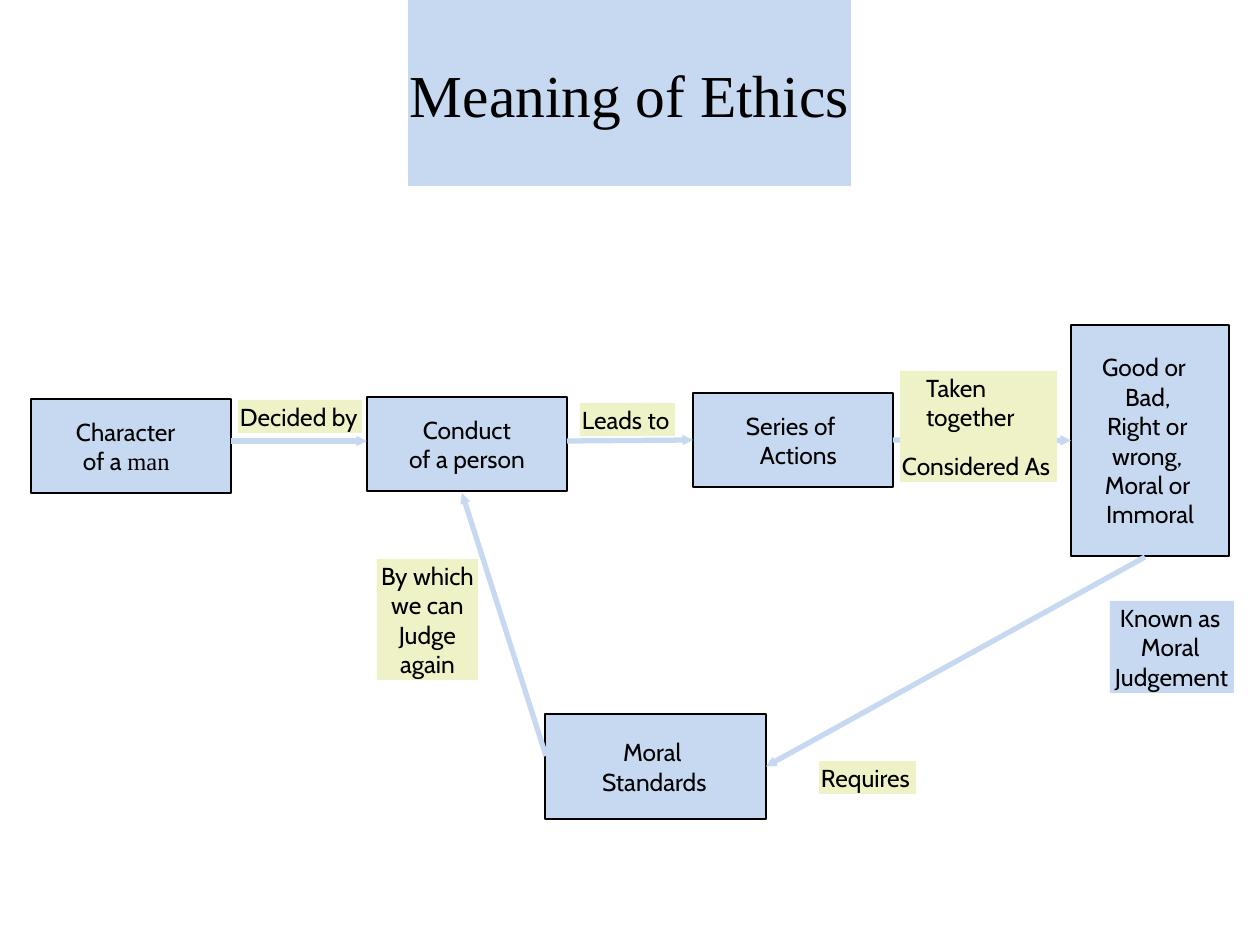
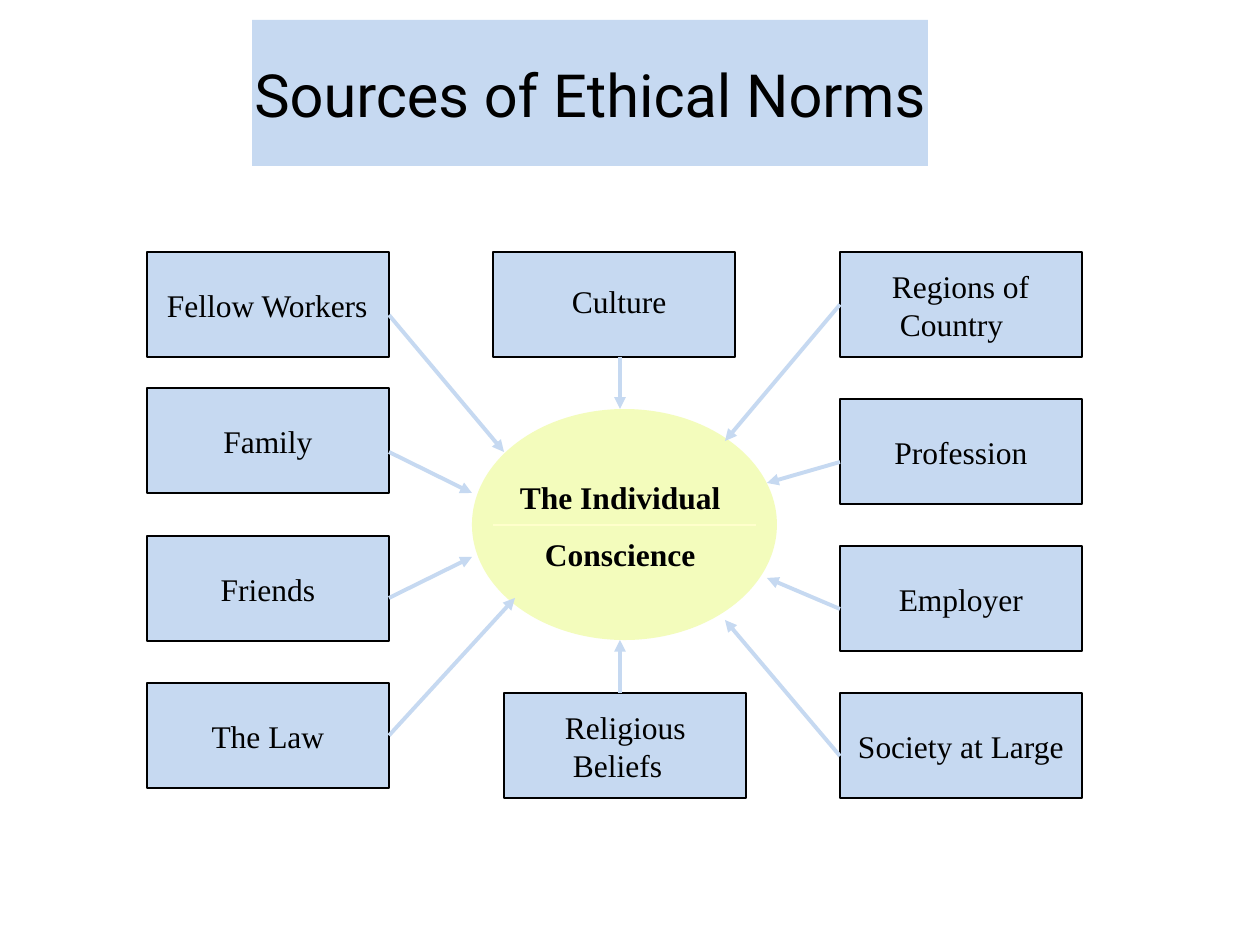
"""Build two slides on ethics: a flow of moral judgement and a map of ethical norms."""
from lxml import etree
from pptx import Presentation
from pptx.dml.color import RGBColor
from pptx.enum.shapes import MSO_CONNECTOR, MSO_SHAPE
from pptx.enum.text import MSO_ANCHOR, MSO_AUTO_SIZE, PP_ALIGN
from pptx.oxml.ns import qn
from pptx.util import Pt

RECT, OVAL = MSO_SHAPE.RECTANGLE, MSO_SHAPE.OVAL
STRAIGHT = MSO_CONNECTOR.STRAIGHT
MIDDLE, NO_FIT = MSO_ANCHOR.MIDDLE, MSO_AUTO_SIZE.NONE
LEFT, CENTER = PP_ALIGN.LEFT, PP_ALIGN.CENTER

SCALE = 914400 / 126
WIDE, HIGH = 1260, 945
BLUE, CREAM, LIME, PALE, BLACK = "C6D9F1", "EFF1C7", "F3FCBC", "FFFFCC", "000000"
SERIF, CABIN, ROBOTO = "Times New Roman", "Cabin", "Roboto"
SNAP = 2
THIN = 0.96

# A line of text is centred when plain, or set left when paired with an indent.
# Words after a bar are set in the serif face.
FLOW = {
    "title": ("Meaning of Ethics", (408, 0, 443, 186), SERIF),
    "boxes": [
        ((31, 399, 200, 94), [(45, "Character"), (52, "of a |man")]),
        ((367, 397, 200, 94), ["Conduct", "of a person"]),
        ((693, 393, 200, 94), [(53, "Series of"), (67, "Actions")]),
        ((1071, 325, 158, 231), [(31, "Good or"), (54, "Bad,"), (36, "Right or"),
                                 (41, "wrong,"), (34, "Moral or"), (35, "Immoral")]),
        ((545, 714, 221, 105), [(78, "Moral"), (57, "Standards")]),
    ],
    "links": [
        (231, 441, 367, 441), (567, 441, 693, 441), (893, 441, 1071, 441),
        (1145, 557, 766, 766), (546, 756, 462, 493),
    ],
    "labels": [
        ((238, 400, 124, 33), CREAM, [(2, "Decided by")]),
        ((580, 403, 95, 33), CREAM, [(2, "Leads to")]),
        ((900, 371, 157, 111), CREAM, [(26, "Taken"), (26, "together"), (2, "Considered As")]),
        ((1110, 601, 124, 92), BLUE, [(10, "Known as"), (31, "Moral"), (5, "Judgement")]),
        ((819, 761, 97, 33), CREAM, [(2, "Requires")]),
        ((377, 559, 101, 121), CREAM, ["By which", "we can", "Judge", "again"]),
    ],
}
NORMS = {
    "title": ("Sources of Ethical Norms", (252, 20, 676, 146), ROBOTO),
    "size": (242, 105),
    "boxes": [
        ((147, 252), [(20, "Fellow Workers")]), ((147, 388), ["Family"]),
        ((147, 536), ["Friends"]), ((147, 683), ["The Law"]),
        ((840, 252), [(52, "Regions of"), (60, "Country")]), ((840, 399), ["Profession"]),
        ((840, 546), ["Employer"]), ((840, 693), ["Society at Large"]),
        ((493, 252), []), ((504, 693), []),
    ],
    "core": (472, 409, 305, 231),
    "labels": [
        ((570, 280, 98, 42), BLUE, [(2, "Culture")]),
        ((563, 706, 125, 79), BLUE, [(2, "Religious"), (10, "Beliefs")]),
        ((518, 476, 204, 42), LIME, [(2, "The Individual")]),
        ((543, 533, 154, 42), LIME, [(2, "Conscience")]),
    ],
    "rule": (493, 525, 756, 525),
    "links": [
        (389, 315, 504, 452), (389, 452, 472, 493), (389, 598, 472, 557), (389, 735, 515, 598),
        (840, 304, 725, 441), (840, 462, 767, 483), (840, 609, 767, 578), (840, 756, 725, 620),
        (620, 357, 620, 409), (620, 693, 620, 640),
    ],
}


def px(num):
    """Turn pixels into EMU."""
    return round(num * SCALE)


def color(code):
    """Turn a hex string into a colour."""
    return RGBColor.from_string(code)


def write(shape, lines, size=14, font=CABIN, bold=False, gap=0, wrap=True, top=0):
    """Fill a shape with lines of text, with a gap in points before the last."""
    frame = shape.text_frame
    frame.auto_size = NO_FIT
    frame.word_wrap = wrap
    frame.vertical_anchor = MIDDLE
    frame.margin_left = frame.margin_right = frame.margin_bottom = 0
    frame.margin_top = px(top)
    for i, line in enumerate(lines):
        para = frame.paragraphs[0] if i == 0 else frame.add_paragraph()
        para.alignment = CENTER
        if isinstance(line, tuple):
            dent, line = line
            para.alignment = LEFT
            para._p.get_or_add_pPr().set("marL", str(px(dent)))
        para.space_before = Pt(gap if i and i == len(lines) - 1 else 0)
        for part, face in zip(line.split("|"), (font, SERIF)):
            run = para.add_run()
            run.text = part
            run.font.name = face
            run.font.size = Pt(size)
            run.font.bold = bold
            run.font.color.rgb = color(BLACK)


def block(slide, area, fill, lines, kind=RECT, edge=False, **form):
    """Add a filled shape with text."""
    shape = slide.shapes.add_shape(kind, *map(px, area))
    shape.shadow.inherit = False
    shape.fill.solid()
    shape.fill.fore_color.rgb = color(fill)
    if edge:
        shape.line.color.rgb = color(BLACK)
        shape.line.width = Pt(THIN)
    else:
        shape.line.fill.background()
    write(shape, lines, **form)
    return shape


def near(boxes, x, y):
    """Find the box and side whose middle lies at a point."""
    for box in boxes:
        left, top, wide, high = box.left, box.top, box.width, box.height
        mids = [(left + wide / 2, top), (left, top + high / 2),
                (left + wide / 2, top + high), (left + wide, top + high / 2)]
        for side, (a, b) in enumerate(mids):
            if max(abs(a - px(x)), abs(b - px(y))) <= px(SNAP):
                return box, side
    return None


def link(slide, ends, boxes=(), width=3, tint=BLUE, head=None):
    """Draw a line, joined to any box side whose middle it meets."""
    line = slide.shapes.add_connector(STRAIGHT, *map(px, ends))
    for point, join in ((ends[:2], line.begin_connect), (ends[2:], line.end_connect)):
        spot = near(boxes, *point)
        if spot:
            join(*spot)
    line.line.color.rgb = color(tint)
    line.line.width = Pt(width)
    if head:
        etree.SubElement(line.line._get_or_add_ln(), qn("a:tailEnd"),
                         type="triangle", w=head, len=head)
    etree.SubElement(line._element.spPr, qn("a:effectLst"))


def start(deck, title):
    """Add a slide with its title band."""
    words, area, font = title
    slide = deck.slides.add_slide(deck.slide_layouts[5])
    band = slide.shapes.title
    band.left, band.top, band.width, band.height = map(px, area)
    band.fill.solid()
    band.fill.fore_color.rgb = color(BLUE)
    write(band, [words], size=34, font=font, wrap=False, top=2)
    return slide


def flow(deck):
    """Build the flow from character to moral standards."""
    slide = start(deck, FLOW["title"])
    boxes = [block(slide, area, BLUE, lines, edge=True) for area, lines in FLOW["boxes"]]
    for ends in FLOW["links"]:
        link(slide, ends, boxes, head="sm")
    for area, fill, lines in FLOW["labels"]:
        block(slide, area, fill, lines, gap=11 if len(lines) == 3 and fill == CREAM else 0)


def norms(deck):
    """Build the map of sources around the conscience."""
    slide = start(deck, NORMS["title"])
    boxes = [block(slide, spot + NORMS["size"], BLUE, lines, edge=True, size=18, font=SERIF)
             for spot, lines in NORMS["boxes"]]
    block(slide, NORMS["core"], LIME, [], kind=OVAL)
    for area, fill, lines in NORMS["labels"]:
        block(slide, area, fill, lines, size=18, font=SERIF, bold=fill == LIME)
    link(slide, NORMS["rule"], width=THIN, tint=PALE)
    for ends in NORMS["links"]:
        link(slide, ends, boxes, width=2.25, head="med")


def main():
    """Build and save the deck."""
    deck = Presentation()
    deck.slide_width, deck.slide_height = px(WIDE), px(HIGH)
    flow(deck)
    norms(deck)
    deck.save("out.pptx")


if __name__ == "__main__":
    main()
